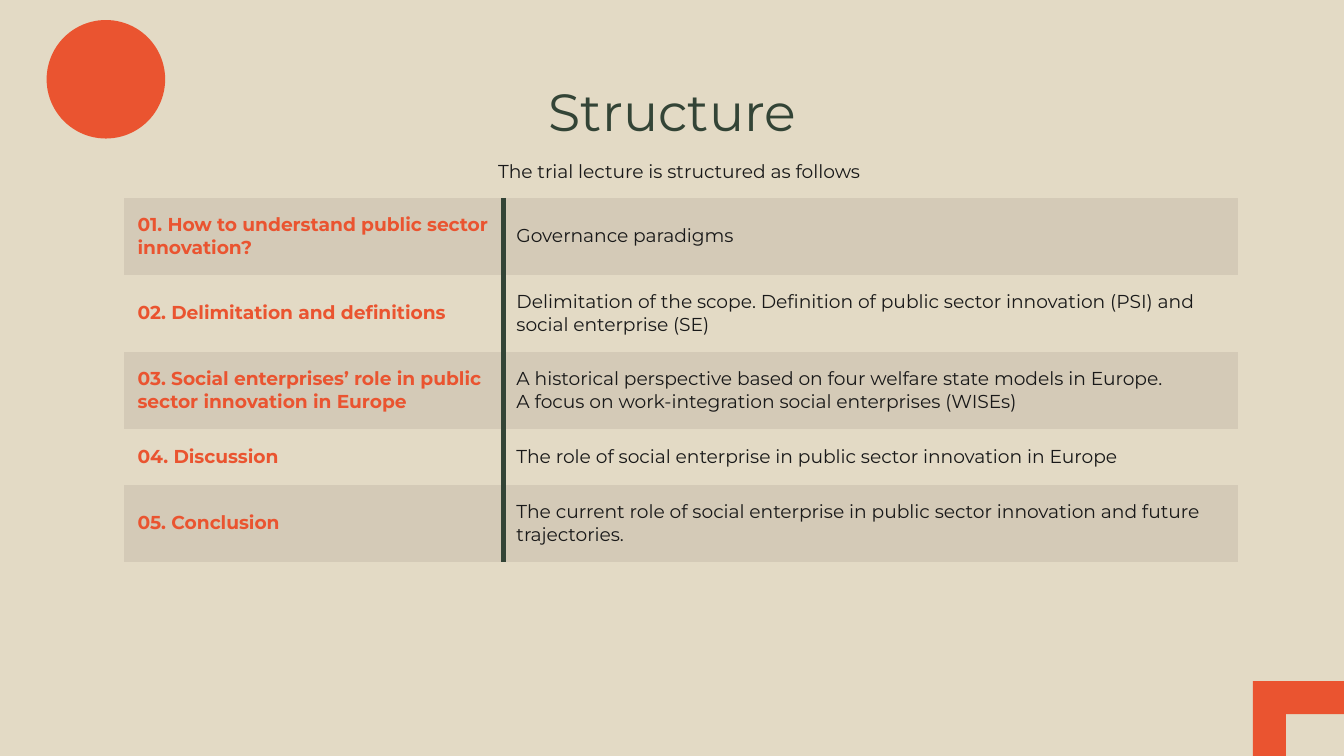
from dataclasses import dataclass

from lxml.etree import SubElement
from pptx import Presentation
from pptx.dml.color import RGBColor
from pptx.enum.shapes import MSO_SHAPE as Shape
from pptx.enum.text import MSO_ANCHOR as Anchor, MSO_AUTO_SIZE as AutoSize, PP_ALIGN as Align
from pptx.oxml.ns import qn
from pptx.util import Pt


@dataclass(frozen=True)
class Theme:
    font: str = "Montserrat"
    background: str = "E3DAC5"
    band: str = "D4CAB7"
    accent: str = "EA5430"
    dark: str = "334436"
    text: str = "191919"
    title_size: int = 28
    body_size: int = 10
    inset: float = 7.2
    divider: int = 3


THEME = Theme()
PLAIN_TABLE_STYLE = "{2D5ABB26-0587-4C30-8999-92F81FD0307C}"
COLUMN_WIDTHS = (203, 394)
TALL_ROW, SHORT_ROW = 41.25, 30

# Heading, description, row height
ROWS = [
    ("01. How to understand public sector innovation?",
     "Governance paradigms", TALL_ROW),
    ("02. Delimitation and definitions",
     "Delimitation of the scope. Definition of public sector innovation (PSI) "
     "and social enterprise (SE)", TALL_ROW),
    ("03. Social enterprises’ role in public sector innovation in Europe",
     "A historical perspective based on four welfare state models in Europe.\n"
     "A focus on work-integration social enterprises (WISEs)", TALL_ROW),
    ("04. Discussion",
     "The role of social enterprise in public sector innovation in Europe", SHORT_ROW),
    ("05. Conclusion",
     "The current role of social enterprise in public sector innovation "
     "and future trajectories.", TALL_ROW),
]


def color(name):
    return RGBColor.from_string(name)


def write(paragraph, text, size, ink, bold=False):
    """Add one run per line, with line breaks between them."""
    for index, line in enumerate(text.split("\n")):
        if index:
            paragraph.add_line_break()
        run = paragraph.add_run()
        run.text = line
        run.font.name = THEME.font
        run.font.size = Pt(size)
        run.font.bold = bold
        run.font.color.rgb = color(ink)


def set_margins(target, right=THEME.inset):
    target.margin_left = target.margin_top = target.margin_bottom = Pt(THEME.inset)
    target.margin_right = Pt(right)


def fill_text_box(shape, box, text, size, ink, right=THEME.inset):
    """Place a title or text box and give it one centred line."""
    shape.left, shape.top, shape.width, shape.height = map(Pt, box)
    frame = shape.text_frame
    frame.word_wrap = True
    frame.auto_size = AutoSize.NONE
    frame.vertical_anchor = Anchor.TOP
    set_margins(frame, right)
    paragraph = frame.paragraphs[0]
    paragraph.alignment = Align.CENTER
    write(paragraph, text, size, ink)


def add_ornament(slide, preset, box):
    shape = slide.shapes.add_shape(preset, *map(Pt, box))
    shape.shadow.inherit = False
    shape.fill.solid()
    shape.fill.fore_color.rgb = color(THEME.accent)
    shape.line.fill.background()
    return shape


def set_divider(cell, side):
    """Draw a border on one side of a cell, ahead of its fill in the XML."""
    properties = cell._tc.get_or_add_tcPr()
    line = SubElement(properties, qn(f"a:{side}"), w=str(Pt(THEME.divider)))
    SubElement(SubElement(line, qn("a:solidFill")), qn("a:srgbClr"), val=THEME.dark)
    properties.insert(0, line)


def fill_cell(cell, text, ink, bold, banded, side):
    set_margins(cell)
    cell.vertical_anchor = Anchor.MIDDLE
    if banded:
        cell.fill.solid()
        cell.fill.fore_color.rgb = color(THEME.band)
    else:
        cell.fill.background()
    set_divider(cell, side)
    write(cell.text_frame.paragraphs[0], text, THEME.body_size, ink, bold)


def add_structure_table(slide, left, top):
    height = sum(row[2] for row in ROWS)
    graphic = slide.shapes.add_table(len(ROWS), len(COLUMN_WIDTHS), Pt(left), Pt(top),
                                     Pt(sum(COLUMN_WIDTHS)), Pt(height))
    table = graphic.table
    table.first_row = table.horz_banding = False
    table._tbl.tblPr.find(qn("a:tableStyleId")).text = PLAIN_TABLE_STYLE
    for column, width in zip(table.columns, COLUMN_WIDTHS):
        column.width = Pt(width)
    for index, (heading, description, row_height) in enumerate(ROWS):
        table.rows[index].height = Pt(row_height)
        banded = index % 2 == 0
        fill_cell(table.cell(index, 0), heading, THEME.accent, True, banded, "lnR")
        fill_cell(table.cell(index, 1), description, THEME.text, False, banded, "lnL")


def main():
    presentation = Presentation()
    presentation.slide_width, presentation.slide_height = Pt(720), Pt(405)
    slide = presentation.slides.add_slide(presentation.slide_layouts[5])
    slide.background.fill.solid()
    slide.background.fill.fore_color.rgb = color(THEME.background)

    # Corner ornaments
    corner = add_ornament(slide, Shape.FRAME, (671.25, 365, 294, 315.5))
    corner.adjustments[0] = 0.06
    add_ornament(slide, Shape.OVAL, (25, 10.75, 63.5, 63.5))

    # Title and introduction
    fill_text_box(slide.shapes.title, (56.75, 35.25, 607, 45.5), "Structure",
                  THEME.title_size, THEME.dark)
    introduction = slide.shapes.add_textbox(0, 0, 0, 0)
    fill_text_box(introduction, (56.75, 78.5, 607, 25),
                  "The trial lecture is structured as follows",
                  THEME.body_size, THEME.text, right=0)

    # Lecture outline
    add_structure_table(slide, 66.5, 106)

    presentation.save("out.pptx")


if __name__ == "__main__":
    main()
